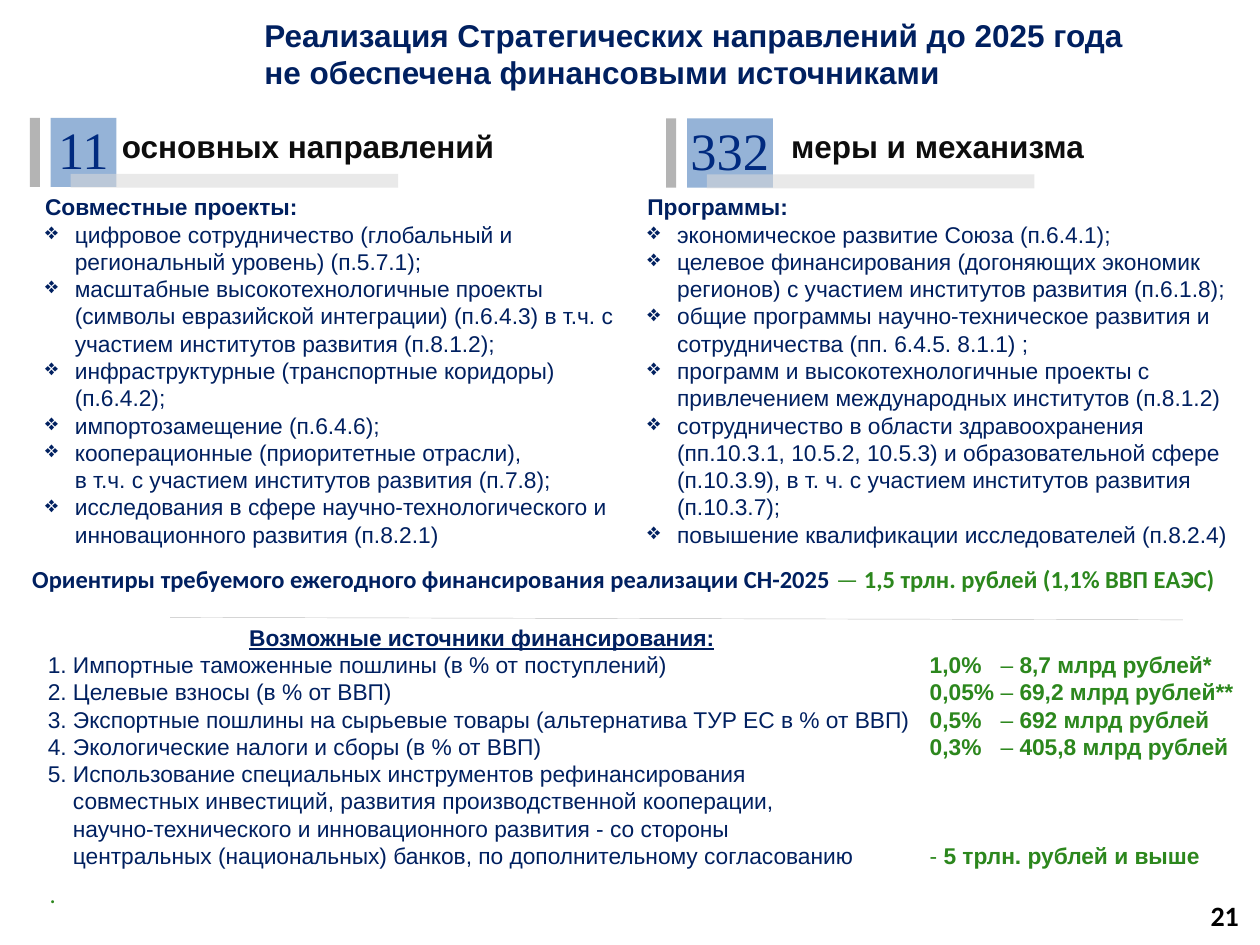
from lxml.etree import SubElement
from pptx import Presentation
from pptx.dml.color import RGBColor
from pptx.enum.shapes import MSO_CONNECTOR, MSO_SHAPE
from pptx.enum.text import MSO_ANCHOR, PP_ALIGN
from pptx.oxml.ns import qn
from pptx.util import Pt

NAVY, GREEN = "002060", "2C871D"
BODY_SIZE = 13
LINE = 1.2 * BODY_SIZE

PROJECTS = [
    "цифровое сотрудничество (глобальный и региональный уровень) (п.5.7.1);",
    "масштабные высокотехнологичные проекты (символы евразийской интеграции) (п.6.4.3) "
    "в т.ч. с участием институтов развития (п.8.1.2);",
    "инфраструктурные (транспортные коридоры) (п.6.4.2);",
    "импортозамещение (п.6.4.6);",
    "кооперационные (приоритетные отрасли), \vв т.ч. с участием институтов развития (п.7.8);",
    "исследования в сфере научно-технологического и инновационного развития (п.8.2.1)",
]
PROGRAMMES = [
    "экономическое развитие Союза (п.6.4.1);",
    "целевое финансирования (догоняющих экономик регионов) "
    "с участием институтов развития (п.6.1.8);",
    "общие программы научно-техническое развития и сотрудничества (пп. 6.4.5. 8.1.1) ;",
    "программ и высокотехнологичные проекты с привлечением "
    "международных институтов (п.8.1.2)",
    "сотрудничество в области здравоохранения (пп.10.3.1, 10.5.2, 10.5.3) "
    "и образовательной сфере (п.10.3.9), в т. ч. с участием институтов развития (п.10.3.7);",
    "повышение квалификации исследователей (п.8.2.4)",
]
SOURCES = [
    "1. Импортные таможенные пошлины (в % от поступлений)",
    "2. Целевые взносы (в % от ВВП)",
    "3. Экспортные пошлины на сырьевые товары (альтернатива ТУР ЕС в % от ВВП)",
    "4. Экологические налоги и сборы (в % от ВВП)",
    "5. Использование специальных инструментов рефинансирования"
    "\vсовместных инвестиций, развития производственной кооперации,"
    "\vнаучно-технического и инновационного развития - со стороны"
    "\vцентральных (национальных) банков, по дополнительному согласованию",
]
AMOUNTS = [
    ("1,0%", "8,7 млрд рублей*"),
    ("0,05%", "69,2 млрд рублей**"),
    ("0,5%", "692 млрд рублей"),
    ("0,3%", "405,8 млрд рублей"),
]


def rgb(value):
    return RGBColor.from_string(value)


def add_box(page, left, top, width, height, anchor=MSO_ANCHOR.TOP, wrap=True):
    frame = page.shapes.add_textbox(Pt(left), Pt(top), Pt(width), Pt(height)).text_frame
    frame.word_wrap = wrap
    frame.vertical_anchor = anchor
    return frame


def add_text(frame, *spans, size=BODY_SIZE, font="Arial", color=NAVY, bold=False,
             italic=False, underline=False, align=PP_ALIGN.LEFT, spacing=None,
             before=0, hang=0, bullet=None, tab=None):
    """Add a paragraph; a span is a text or a (text, bold, color) tuple."""
    para = frame.paragraphs[0]
    if para.runs:
        para = frame.add_paragraph()
    properties = para._p.get_or_add_pPr()
    if hang:
        properties.set("marL", str(Pt(hang)))
        properties.set("indent", str(-Pt(hang) if bullet else 0))
        if not bullet:
            properties.set("indent", str(-Pt(hang)))
    if bullet:
        SubElement(properties, qn("a:buChar"), char=bullet)
    if tab:
        stops = SubElement(properties, qn("a:tabLst"))
        SubElement(stops, qn("a:tab"), pos=str(Pt(tab)), algn="l")
    para.alignment = align
    if spacing:
        para.line_spacing = Pt(spacing)
    if before:
        para.space_before = Pt(before)
    for span in spans:
        text, span_bold, span_color = span if isinstance(span, tuple) else (span, bold, color)
        for number, line in enumerate(text.split("\v")):
            if number:
                para.add_line_break()
            run = para.add_run()
            run.text = line
            run.font.name, run.font.size = font, Pt(size)
            run.font.bold, run.font.italic, run.font.underline = span_bold, italic, underline
            run.font.color.rgb = rgb(span_color)


def add_bar(page, left, top, width, height, color, opacity=100):
    bar = page.shapes.add_shape(MSO_SHAPE.RECTANGLE, Pt(left), Pt(top), Pt(width), Pt(height))
    bar.shadow.inherit = False
    bar.fill.solid()
    bar.fill.fore_color.rgb = rgb(color)
    bar.line.fill.background()
    if opacity < 100:
        fill = bar._element.spPr.find(qn("a:solidFill"))
        SubElement(fill[0], qn("a:alpha"), val=str(opacity * 1000))


def add_counter(page, left, top, number, square_width, label, label_left, label_width):
    square_left = left + 12
    add_bar(page, square_left, top, square_width, 39.5, "95B3D7")
    add_bar(page, left, top, 5.8, 39.5, "808080", opacity=59)
    add_bar(page, left + 23.4, top + 32, 187.2, 7.9, "D9D9D9", opacity=57)
    frame = add_box(page, label_left, top + 1.5, label_width, 29, wrap=False)
    add_text(frame, label, size=18, color="0D0D0D", bold=True, align=PP_ALIGN.RIGHT)
    frame = add_box(page, square_left - 6, top - 4, square_width + 12, 44, wrap=False)
    add_text(frame, number, size=30, font="Times New Roman", color="002A7F",
             align=PP_ALIGN.CENTER)


def add_list(page, left, top, width, height, heading, items):
    frame = add_box(page, left, top, width, height)
    add_text(frame, heading, bold=True, spacing=LINE)
    for item in items:
        add_text(frame, item, hang=17, bullet="❖", spacing=LINE)


def add_sources(page, left, top, width, height):
    frame = add_box(page, left, top, width, height)
    add_text(frame, "Возможные источники финансирования:", bold=True, underline=True,
             align=PP_ALIGN.CENTER, spacing=LINE)
    for source in SOURCES:
        add_text(frame, source, hang=14.4, spacing=LINE)


def add_amounts(page, left, top, width, height):
    """The first amount stands level with the first source, one line below its heading."""
    frame = add_box(page, left, top + LINE, width, height - LINE)
    for share, amount in AMOUNTS:
        add_text(frame, share + "\t", ("–", False, GREEN), " " + amount,
                 color=GREEN, bold=True, tab=40.5, spacing=LINE)
    add_text(frame, ("-", False, GREEN), " 5 трлн. рублей и выше",
             color=GREEN, bold=True, before=3 * LINE, spacing=LINE)


def add_divider(page, left, top, right, bottom):
    line = page.shapes.add_connector(MSO_CONNECTOR.STRAIGHT, Pt(right), Pt(bottom),
                                     Pt(left), Pt(top))
    line.line.color.rgb = rgb("BFBFBF")
    line.line.width = Pt(0.25)
    SubElement(line._element.spPr, qn("a:effectLst"))


def main():
    deck = Presentation()
    deck.slide_width, deck.slide_height = Pt(720), Pt(540)
    page = deck.slides.add_slide(deck.slide_layouts[6])

    title = add_box(page, 144, 11.5, 543, 38, anchor=MSO_ANCHOR.MIDDLE)
    add_text(title, "Реализация Стратегических направлений до 2025 года"
             "\vне обеспечена финансовыми источниками", size=18, bold=True, spacing=21.6)
    add_counter(page, 17, 67.3, "11", 37.5, "основных направлений", 59.8, 229.7)
    add_counter(page, 380.6, 67.7, "332", 49, "меры и механизма", 435, 191.5)
    add_list(page, 18.7, 106.8, 357, 212.4, "Совместные проекты:", PROJECTS)
    add_list(page, 362.9, 106.8, 357, 212.4, "Программы:", PROGRAMMES)

    target = add_box(page, 2.2, 319, 711.4, 24.5)
    add_text(target, "Ориентиры требуемого ежегодного финансирования реализации СН-2025 ",
             ("— ", False, GREEN), ("1,5 трлн. рублей (1,1% ВВП ЕАЭС) ", True, GREEN),
             size=14, font="Calibri", bold=True, align=PP_ALIGN.CENTER)
    add_divider(page, 97.2, 352.8, 676, 354.2)
    add_sources(page, 20.2, 352.8, 509.8, 149)
    add_amounts(page, 524.2, 352.8, 196.6, 149)

    footnote = add_box(page, 21.6, 499, 568.8, 24.5)
    add_text(footnote, ".", size=14, font="Calibri", color=GREEN, italic=True)
    number = add_box(page, 547.2, 512, 167.8, 21.6, anchor=MSO_ANCHOR.MIDDLE)
    add_text(number, "21", size=16, font="Calibri", color="000000", bold=True,
             align=PP_ALIGN.RIGHT)
    deck.save("out.pptx")


if __name__ == "__main__":
    main()
